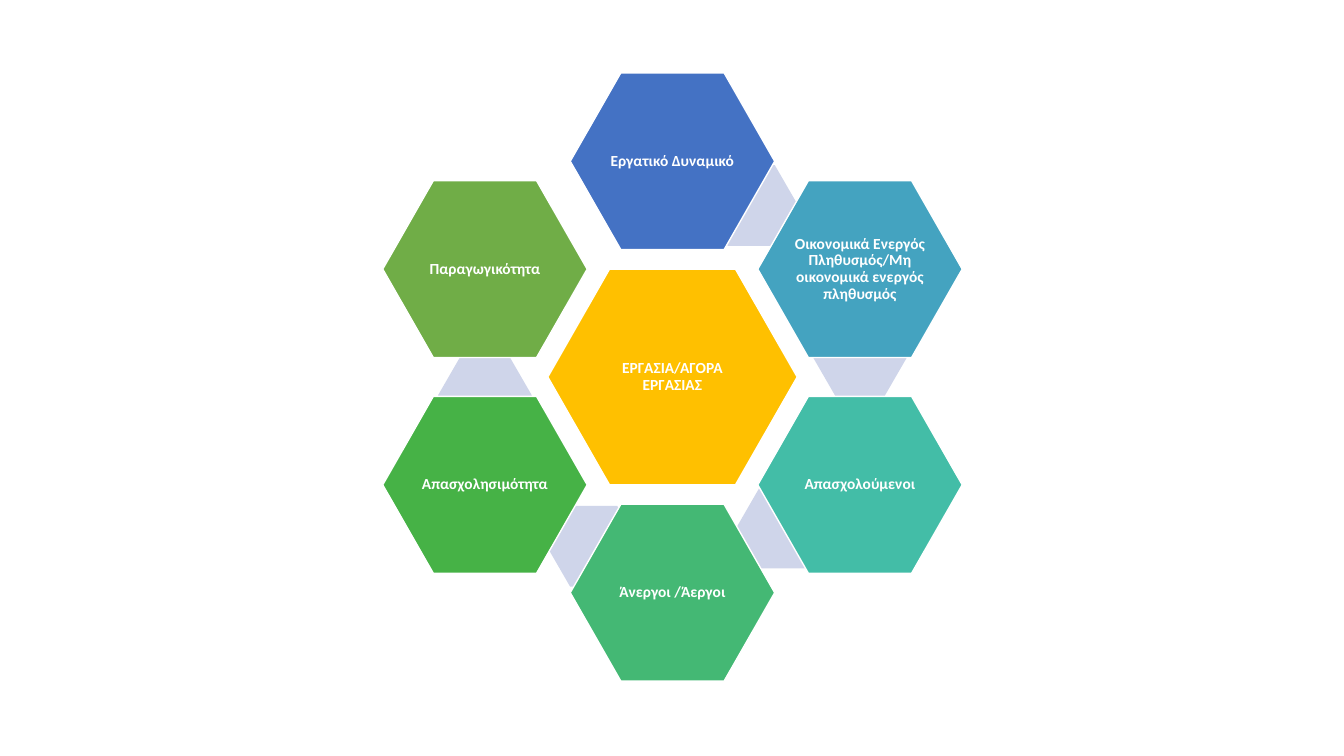
from dataclasses import dataclass

from pptx import Presentation
from pptx.dml.color import RGBColor
from pptx.enum.shapes import MSO_SHAPE
from pptx.enum.text import MSO_ANCHOR, PP_ALIGN
from pptx.shapes.autoshape import Shape
from pptx.slide import Slide
from pptx.util import Inches, Pt

WHITE = RGBColor(0xFF, 0xFF, 0xFF)
AMBER = RGBColor(0xFF, 0xC0, 0x00)
BLUE = RGBColor(0x44, 0x72, 0xC4)
SKY = RGBColor(0x44, 0xA3, 0xC0)
TEAL = RGBColor(0x43, 0xBD, 0xA7)
EMERALD = RGBColor(0x44, 0xB8, 0x74)
GREEN = RGBColor(0x46, 0xB2, 0x46)
OLIVE = RGBColor(0x70, 0xAD, 0x47)
LAVENDER = RGBColor(0xCF, 0xD5, 0xEA)

CENTRE_X, CENTRE_Y = Inches(6.67), Inches(3.74)
COLUMN, ROW = Inches(1.86), Inches(1.07)
INSET = Inches(0.02)

FRAME_FORMAT = {
    "word_wrap": True,
    "vertical_anchor": MSO_ANCHOR.MIDDLE,
    "margin_left": INSET,
    "margin_top": INSET,
    "margin_right": INSET,
    "margin_bottom": INSET,
}
PARAGRAPH_FORMAT = {"alignment": PP_ALIGN.CENTER, "line_spacing": 0.9}
FONT_FORMAT = {"name": "Calibri", "size": Pt(11), "bold": True}


@dataclass(frozen=True)
class HexagonSize:
    columns: float
    rows: float
    adjustment: float


@dataclass(frozen=True)
class Topic:
    text: str
    column: float
    row: float
    colour: RGBColor
    size: HexagonSize


@dataclass(frozen=True)
class Link:
    column: float
    row: float


CORE = HexagonSize(1.33, 2, 0.286)
PETAL = HexagonSize(1.09, 1.64, 0.286)
LINK = HexagonSize(0.5, 0.75, 0.289)

LINKS = [
    Link(0.42, -1.59),
    Link(1, -0.18),
    Link(0.59, 1.4),
    Link(-0.42, 1.57),
    Link(-1, 0.17),
]

TOPICS = [
    Topic("ΕΡΓΑΣΙΑ/ΑΓΟΡΑ ΕΡΓΑΣΙΑΣ", 0, 0, AMBER, CORE),
    Topic("Εργατικό Δυναμικό", 0, -2, BLUE, PETAL),
    Topic("Οικονομικά Ενεργός Πληθυσμός/Μη οικονομικά ενεργός πληθυσμός", 1, -1, SKY, PETAL),
    Topic("Απασχολούμενοι", 1, 1, TEAL, PETAL),
    Topic("Άνεργοι /Άεργοι", 0, 2, EMERALD, PETAL),
    Topic("Απασχολησιμότητα", -1, 1, GREEN, PETAL),
    Topic("Παραγωγικότητα", -1, -1, OLIVE, PETAL),
]


def apply_format(target: object, values: dict) -> None:
    for name, value in values.items():
        setattr(target, name, value)


def add_hexagon(slide: Slide, column: float, row: float, size: HexagonSize, colour: RGBColor) -> Shape:
    width, height = round(size.columns * COLUMN), round(size.rows * ROW)
    left = round(CENTRE_X + column * COLUMN - width / 2)
    top = round(CENTRE_Y + row * ROW - height / 2)
    shape = slide.shapes.add_shape(MSO_SHAPE.HEXAGON, left, top, width, height)
    shape.adjustments[0] = size.adjustment
    shape.shadow.inherit = False
    shape.fill.solid()
    shape.fill.fore_color.rgb = colour
    shape.line.fill.background()
    return shape


def add_topic(slide: Slide, topic: Topic) -> None:
    shape = add_hexagon(slide, topic.column, topic.row, topic.size, topic.colour)
    shape.line.color.rgb = WHITE
    shape.line.width = Pt(1)
    apply_format(shape.text_frame, FRAME_FORMAT)
    paragraph = shape.text_frame.paragraphs[0]
    apply_format(paragraph, PARAGRAPH_FORMAT)
    run = paragraph.add_run()
    run.text = topic.text
    apply_format(run.font, FONT_FORMAT)
    run.font.color.rgb = WHITE


def main() -> None:
    presentation = Presentation()
    presentation.slide_width = Inches(13.33)
    presentation.slide_height = Inches(7.5)
    slide = presentation.slides.add_slide(presentation.slide_layouts[6])
    for link in LINKS:
        add_hexagon(slide, link.column, link.row, LINK, LAVENDER)
    for topic in TOPICS:
        add_topic(slide, topic)
    presentation.save("out.pptx")


if __name__ == "__main__":
    main()
